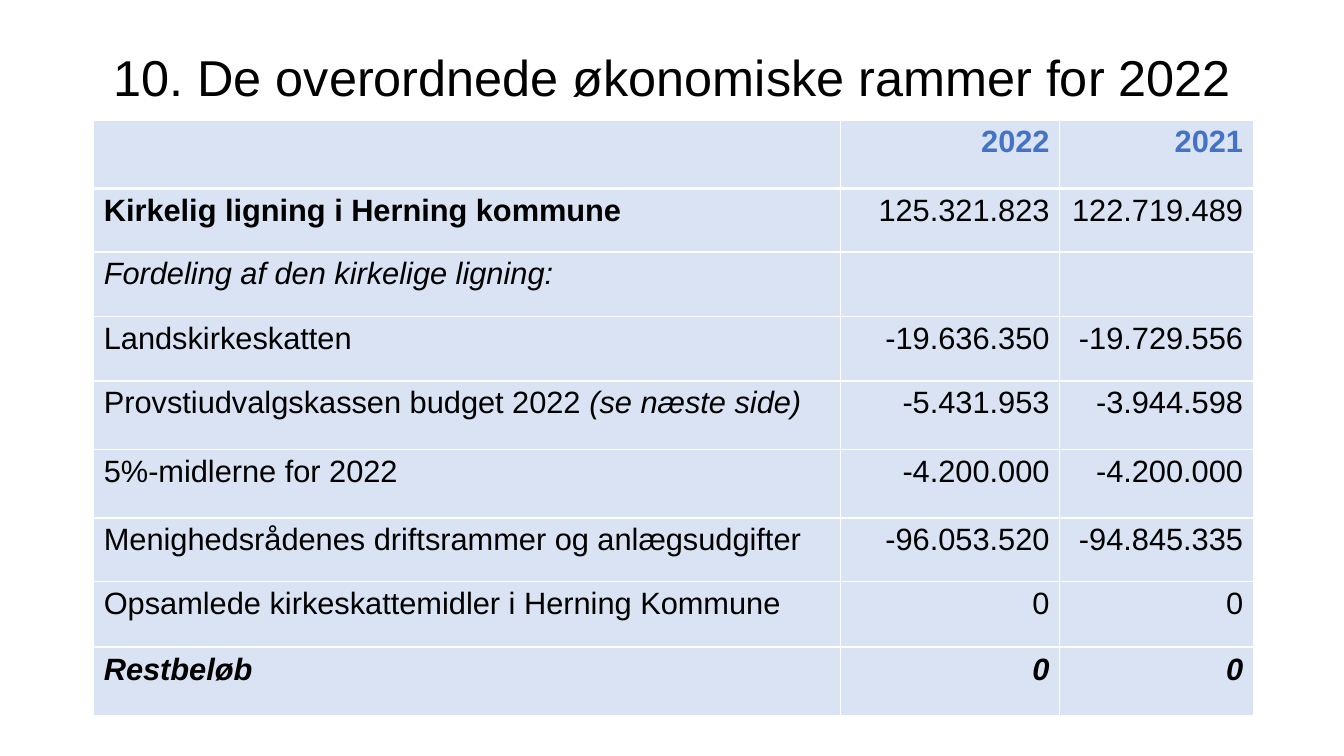
from lxml.etree import SubElement
from pptx import Presentation
from pptx.dml.color import RGBColor
from pptx.enum.text import MSO_ANCHOR, PP_ALIGN
from pptx.oxml.ns import qn
from pptx.util import Inches, Pt

BLACK, WHITE, BLUE, PALE_BLUE = "000000", "FFFFFF", "4472C4", "DAE3F3"


def set_font(font, size, color, bold=False, italic=False):
    font.name = "Arial"
    font.size = Pt(size)
    font.color.rgb = RGBColor.from_string(color)
    font.bold = bold
    font.italic = italic


def add_border(cell, side, width):
    line = SubElement(cell._tc.get_or_add_tcPr(), qn(f"a:{side}"), w=str(Pt(width)))
    fill = SubElement(line, qn("a:solidFill"))
    SubElement(fill, qn("a:srgbClr"), val=WHITE)


presentation = Presentation()
presentation.slide_width = Inches(13.33)
presentation.slide_height = Inches(7.5)
slide = presentation.slides.add_slide(presentation.slide_layouts[6])

title = slide.shapes.add_textbox(Inches(0.92), Inches(0.4), Inches(11.5), Inches(0.79))
title.text_frame.word_wrap = True
title.text_frame.vertical_anchor = MSO_ANCHOR.MIDDLE
paragraph = title.text_frame.paragraphs[0]
paragraph.text = "10. De overordnede økonomiske rammer for 2022"
paragraph.alignment = PP_ALIGN.CENTER
paragraph.line_spacing = 0.9
set_font(paragraph.font, 36, BLACK)

budget_rows = [
    ("", "2022", "2021"),
    ("Kirkelig ligning i Herning kommune", "125.321.823", "122.719.489"),
    ("Fordeling af den kirkelige ligning:", "", ""),
    ("Landskirkeskatten", "-19.636.350", "-19.729.556"),
    ("Provstiudvalgskassen budget 2022 ", "-5.431.953", "-3.944.598"),
    ("5%-midlerne for 2022", "-4.200.000", "-4.200.000"),
    ("Menighedsrådenes driftsrammer og anlægsudgifter", "-96.053.520", "-94.845.335"),
    ("Opsamlede kirkeskattemidler i Herning Kommune", "0", "0"),
    ("Restbeløb", "0", "0"),
]
column_widths = [7.41, 2.17, 1.92]
row_heights = [0.68, 0.63, 0.64, 0.64, 0.68, 0.68, 0.63, 0.65, 0.68]
header, total, subheading, council = 0, 8, 2, 4
bold_cells = {(1, 0)}

table = slide.shapes.add_table(
    len(budget_rows), len(column_widths),
    Inches(0.93), Inches(1.19), Inches(11.5), Inches(5.89),
).table
for column, width in zip(table.columns, column_widths):
    column.width = Inches(width)
for row, height in zip(table.rows, row_heights):
    row.height = Inches(height)

for row_index, values in enumerate(budget_rows):
    for column_index, value in enumerate(values):
        cell = table.cell(row_index, column_index)
        for side in ("lnL", "lnR", "lnT", "lnB"):
            below_header = (row_index, side) in {(header, "lnB"), (header + 1, "lnT")}
            add_border(cell, side, 3 if below_header else 1)
        cell.fill.solid()
        cell.fill.fore_color.rgb = RGBColor.from_string(PALE_BLUE)
        paragraph = cell.text_frame.paragraphs[0]
        paragraph.alignment = PP_ALIGN.RIGHT if column_index else PP_ALIGN.LEFT
        set_font(
            paragraph.font, 22, BLUE if row_index == header else BLACK,
            bold=row_index in (header, total) or (row_index, column_index) in bold_cells,
            italic=row_index in (subheading, total),
        )
        if value:
            paragraph.add_run().text = value

note = table.cell(council, 0).text_frame.paragraphs[0].add_run()
note.text = "(se næste side)"
note.font.italic = True

presentation.save("out.pptx")
